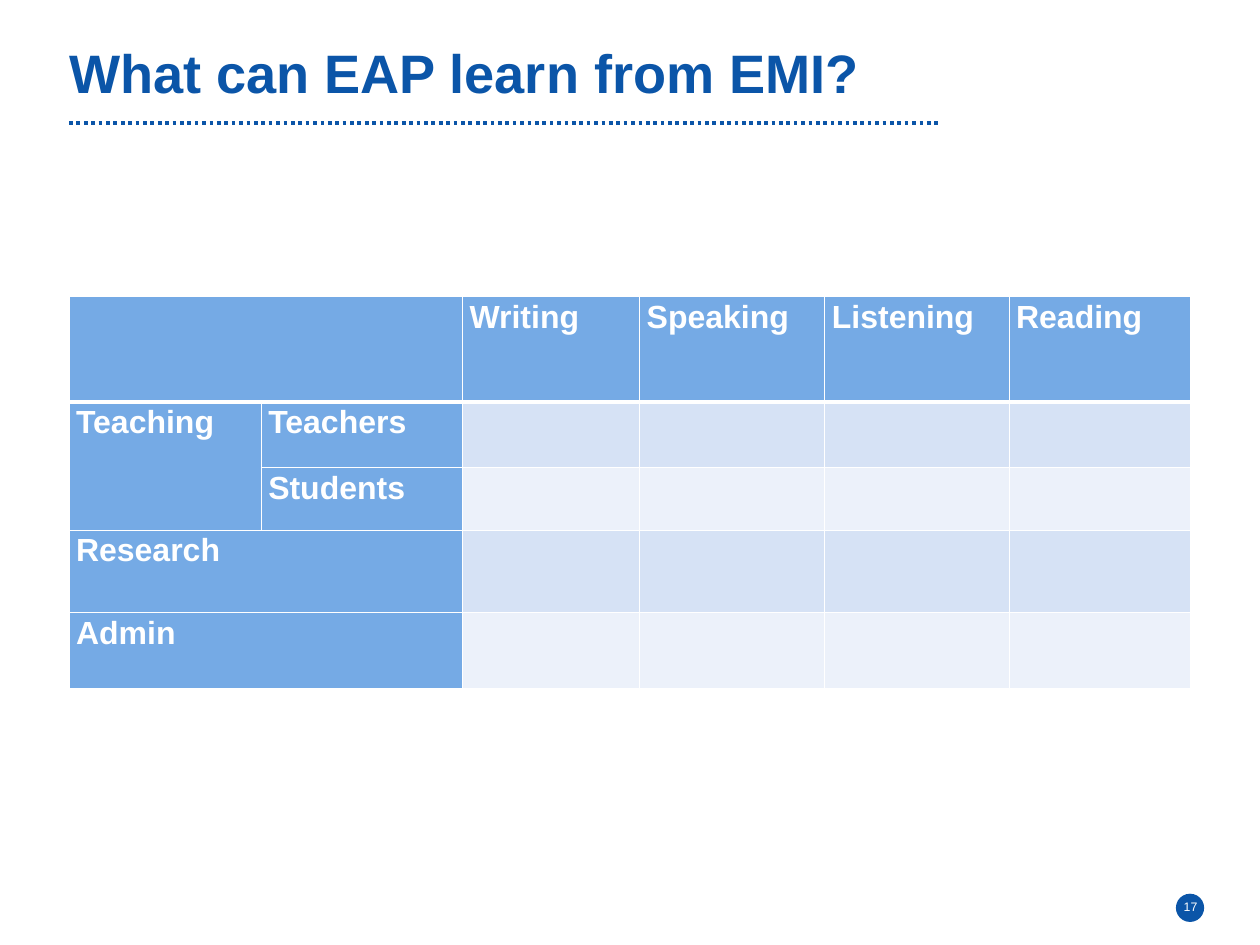
from dataclasses import dataclass

from lxml.etree import SubElement as Sub
from pptx import Presentation
from pptx.dml.color import RGBColor
from pptx.enum.dml import MSO_LINE
from pptx.enum.shapes import MSO_CONNECTOR, MSO_SHAPE
from pptx.enum.text import MSO_ANCHOR as Anchor, MSO_AUTO_SIZE as Fit, PP_ALIGN as Align
from pptx.oxml.ns import qn
from pptx.util import Cm, Pt

NAVY, BLUE, WHITE = "0B55A8", "75AAE5", "FFFFFF"
BANDS = ["D6E2F5", "ECF1FA"]
LEFT = 1.98
COLS = [5.51, 5.77, 5.08, 5.31, 5.28, 5.21]
ROWS = [3.02, 1.88, 1.8, 2.36, 2.18]


@dataclass
class Label:
    row: int
    col: int
    text: str = ""
    down: int = 1
    across: int = 1


HEADS = ["Writing", "Speaking", "Listening", "Reading"]
LABELS = [
    Label(0, 0, across=2),
    *[Label(0, col, text) for col, text in enumerate(HEADS, 2)],
    Label(1, 0, "Teaching", down=2),
    Label(1, 1, "Teachers"),
    Label(2, 1, "Students"),
    Label(3, 0, "Research", across=2),
    Label(4, 0, "Admin", across=2),
]


def paint(target, color: str) -> None:
    """Give a fill or a font a colour."""
    if hasattr(target, "solid"):
        target.solid()
        target = target.fore_color
    else:
        target = target.color
    target.rgb = RGBColor.from_string(color)


def write(frame, text: str, *, size: float, color: str = WHITE, bold: bool = False,
          align=Align.LEFT, space=None, anchor=Anchor.TOP) -> None:
    frame.word_wrap = True
    frame.vertical_anchor = anchor
    para = frame.paragraphs[0]
    para.alignment = align
    para.line_spacing = space
    run = para.add_run()
    run.text = text
    font = run.font
    font.name, font.size, font.bold = "Arial", Pt(size), bold
    paint(font, color)


def inset(frame, side: float, end: float) -> None:
    frame.margin_left = frame.margin_right = Cm(side)
    frame.margin_top = frame.margin_bottom = Cm(end)


def border(cell, row: int) -> None:
    """Draw white cell edges, thick below the header row."""
    props = cell._tc.get_or_add_tcPr()
    for edge in "LRTB":
        thick = (edge, row) in (("B", 0), ("T", 1))
        line = Sub(props, qn(f"a:ln{edge}"), w=str(Pt(3 if thick else 1)))
        Sub(Sub(line, qn("a:solidFill")), qn("a:srgbClr"), val=WHITE)


def draw_grid(shapes) -> None:
    frame = shapes.add_table(len(ROWS), len(COLS), Cm(LEFT), Cm(8.51),
                             Cm(sum(COLS)), Cm(sum(ROWS)))
    grid = frame.table
    grid.first_row = grid.horz_banding = False
    for col, width in zip(grid.columns, COLS):
        col.width = Cm(width)
    for row, height in zip(grid.rows, ROWS):
        row.height = Cm(height)

    # Edges come before fills in the cell properties
    for row in range(len(ROWS)):
        for col in range(len(COLS)):
            cell = grid.cell(row, col)
            border(cell, row)
            head = row == 0 or col < 2
            paint(cell.fill, BLUE if head else BANDS[(row - 1) % 2])

    for item in LABELS:
        cell = grid.cell(item.row, item.col)
        if item.down > 1 or item.across > 1:
            cell.merge(grid.cell(item.row + item.down - 1, item.col + item.across - 1))
        inset(cell, 0.2, 0)
        if item.text:
            write(cell.text_frame, item.text, size=26, bold=True, space=1.07)


def draw_rule(shapes) -> None:
    rule = shapes.add_connector(MSO_CONNECTOR.STRAIGHT, Cm(LEFT), Cm(3.53), Cm(26.97), Cm(3.53))
    paint(rule.line.fill, NAVY)
    rule.line.width = Pt(3)
    rule.line.dash_style = MSO_LINE.ROUND_DOT
    Sub(rule._element.spPr, qn("a:effectLst"))


def draw_number(shapes) -> None:
    dot = shapes.add_shape(MSO_SHAPE.OVAL, Cm(33.71), Cm(25.63), Cm(0.81), Cm(0.81))
    dot.shadow.inherit = False
    paint(dot.fill, NAVY)
    dot.line.fill.background()
    box = shapes.add_textbox(Cm(33.43), Cm(25.27), Cm(1.4), Cm(1.45))
    inset(box.text_frame, 0.36, 0.18)
    write(box.text_frame, "17", size=10, align=Align.CENTER, anchor=Anchor.MIDDLE)


def main() -> None:
    deck = Presentation()
    deck.slide_width, deck.slide_height = Cm(36.12), Cm(27.1)
    slide = deck.slides.add_slide(deck.slide_layouts[5])
    shapes = slide.shapes
    paint(slide.background.fill, WHITE)

    # Title
    title = shapes.title
    title.left, title.top, title.width, title.height = Cm(LEFT), Cm(1.17), Cm(26.42), Cm(2.29)
    inset(title.text_frame, 0, 0)
    title.text_frame.auto_size = Fit.NONE
    write(title.text_frame, "What can EAP learn from EMI?", size=44, color=NAVY,
          bold=True, space=Pt(52))

    # Rule, page number and table
    draw_rule(shapes)
    draw_number(shapes)
    draw_grid(shapes)
    deck.save("out.pptx")


if __name__ == "__main__":
    main()
